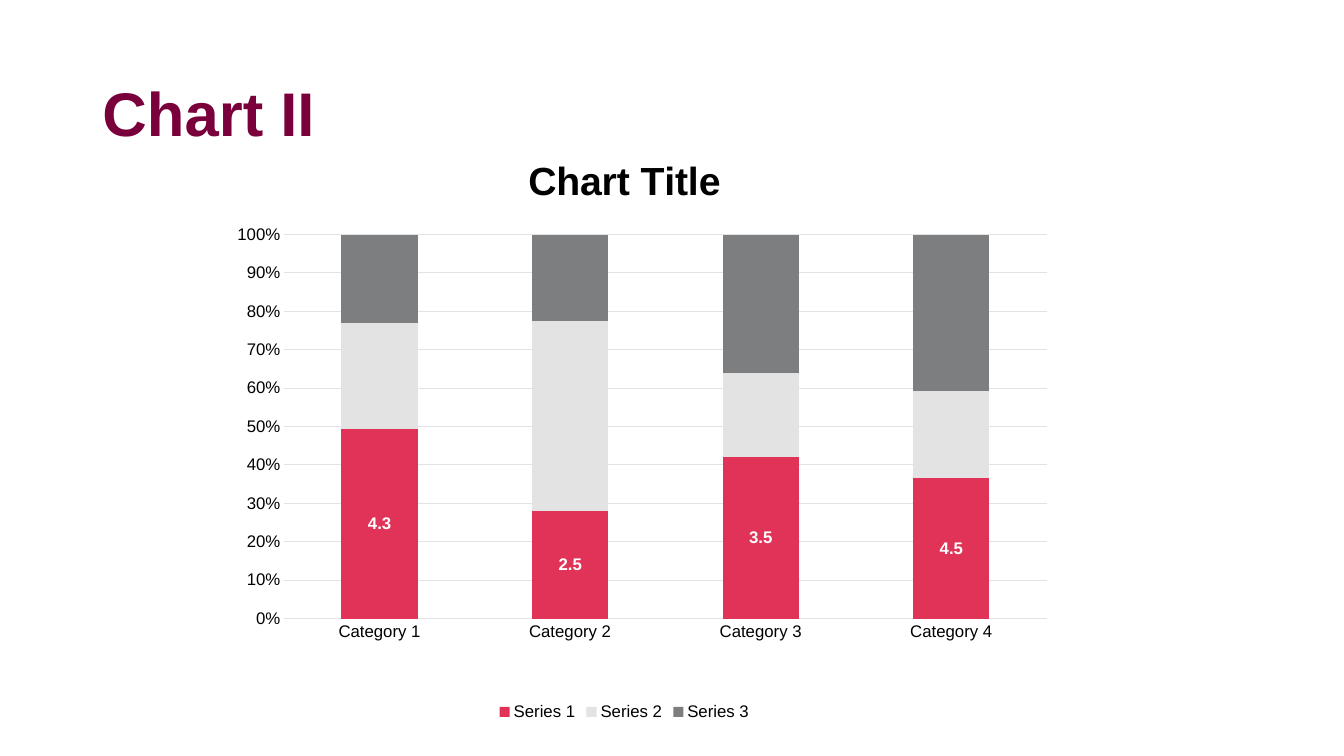
import pptx
import pptx.chart.data
import pptx.dml.color
import pptx.enum.chart
import pptx.enum.text
import pptx.oxml
import pptx.oxml.ns
import pptx.util

Pt = pptx.util.Pt
RGBColor = pptx.dml.color.RGBColor

FONT = "Arial"
BURGUNDY = RGBColor(0x7A, 0x00, 0x3B)
RED = RGBColor(0xE0, 0x33, 0x57)
LIGHT_GREY = RGBColor(0xE2, 0xE3, 0xE2)
DARK_GREY = RGBColor(0x7D, 0x7E, 0x7F)
BLACK = RGBColor(0x00, 0x00, 0x00)
WHITE = RGBColor(0xFF, 0xFF, 0xFF)

CATEGORIES = ["Category 1", "Category 2", "Category 3", "Category 4"]
SERIES = [
    ("Series 1", (4.3, 2.5, 3.5, 4.5), RED),
    ("Series 2", (2.4, 4.4, 1.8, 2.8), LIGHT_GREY),
    ("Series 3", (2, 2, 3, 5), DARK_GREY),
]


def set_font(font, size, color, bold=False):
    font.name = FONT
    font.size = Pt(size)
    font.bold = bold
    font.color.rgb = color


def format_title(title, text):
    title.left, title.top = Pt(66), Pt(56)
    title.width, title.height = Pt(703.5), Pt(104.5)
    frame = title.text_frame
    frame.text = text
    frame.word_wrap = True
    frame.auto_size = pptx.enum.text.MSO_AUTO_SIZE.NONE
    frame.vertical_anchor = pptx.enum.text.MSO_ANCHOR.TOP
    paragraph = frame.paragraphs[0]
    paragraph.alignment = pptx.enum.text.PP_ALIGN.LEFT
    paragraph.line_spacing = 0.9
    set_font(paragraph.font, 44, BURGUNDY, bold=True)


def place_plot(chart, x, y, width, height):
    """Fix the inner plot area, in fractions of the chart."""
    plot_area = chart._chartSpace.chart.plotArea
    for layout in plot_area.findall(pptx.oxml.ns.qn("c:layout")):
        plot_area.remove(layout)
    sides = "".join(
        f'<c:{name} val="{value}"/>'
        for name, value in (("x", x), ("y", y), ("w", width), ("h", height))
    )
    plot_area.insert(0, pptx.oxml.parse_xml(
        f'<c:layout {pptx.oxml.ns.nsdecls("c")}><c:manualLayout>'
        '<c:layoutTarget val="inner"/><c:xMode val="edge"/><c:yMode val="edge"/>'
        f'{sides}</c:manualLayout></c:layout>'
    ))


def format_line(line):
    line.color.rgb = LIGHT_GREY
    line.width = Pt(0.75)


def format_axes(chart):
    for axis in (chart.category_axis, chart.value_axis):
        axis.major_tick_mark = pptx.enum.chart.XL_TICK_MARK.NONE
        axis.minor_tick_mark = pptx.enum.chart.XL_TICK_MARK.NONE
        set_font(axis.tick_labels.font, 12, BLACK)
    format_line(chart.category_axis.format.line)
    value_axis = chart.value_axis
    value_axis.format.line.fill.background()
    value_axis.has_major_gridlines = True
    format_line(value_axis.major_gridlines.format.line)
    value_axis.major_unit = 0.1
    value_axis.tick_labels.number_format = "0%"
    value_axis.tick_labels.number_format_is_linked = False


def format_series(plot):
    plot.gap_width = 150
    plot.overlap = 100
    plot.vary_by_categories = False
    for series, (_, _, color) in zip(plot.series, SERIES):
        series.format.fill.solid()
        series.format.fill.fore_color.rgb = color
    labels = plot.series[0].data_labels
    labels.show_value = True
    labels.position = pptx.enum.chart.XL_LABEL_POSITION.CENTER
    set_font(labels.font, 12, WHITE, bold=True)


def add_stacked_chart(slide):
    data = pptx.chart.data.CategoryChartData()
    data.categories = CATEGORIES
    for name, values, _ in SERIES:
        data.add_series(name, values)
    chart = slide.shapes.add_chart(
        pptx.enum.chart.XL_CHART_TYPE.COLUMN_STACKED_100,
        Pt(123), Pt(94.3), Pt(646), Pt(423.4), data,
    ).chart
    set_font(chart.font, 10, BURGUNDY)
    chart.has_title = True
    chart.chart_title.include_in_layout = False
    chart.chart_title.text_frame.text = "Chart Title"
    set_font(chart.chart_title.text_frame.paragraphs[0].font, 28, BLACK, bold=True)
    chart.has_legend = True
    chart.legend.position = pptx.enum.chart.XL_LEGEND_POSITION.BOTTOM
    chart.legend.include_in_layout = False
    set_font(chart.legend.font, 12, BLACK)
    format_axes(chart)
    format_series(chart.plots[0])
    place_plot(chart, 0.124, 0.173, 0.843, 0.648)


def main():
    presentation = pptx.Presentation()
    presentation.slide_width, presentation.slide_height = Pt(960), Pt(540)
    slide = presentation.slides.add_slide(presentation.slide_layouts[5])
    format_title(slide.shapes.title, "Chart II")
    add_stacked_chart(slide)
    presentation.save("out.pptx")


if __name__ == "__main__":
    main()
